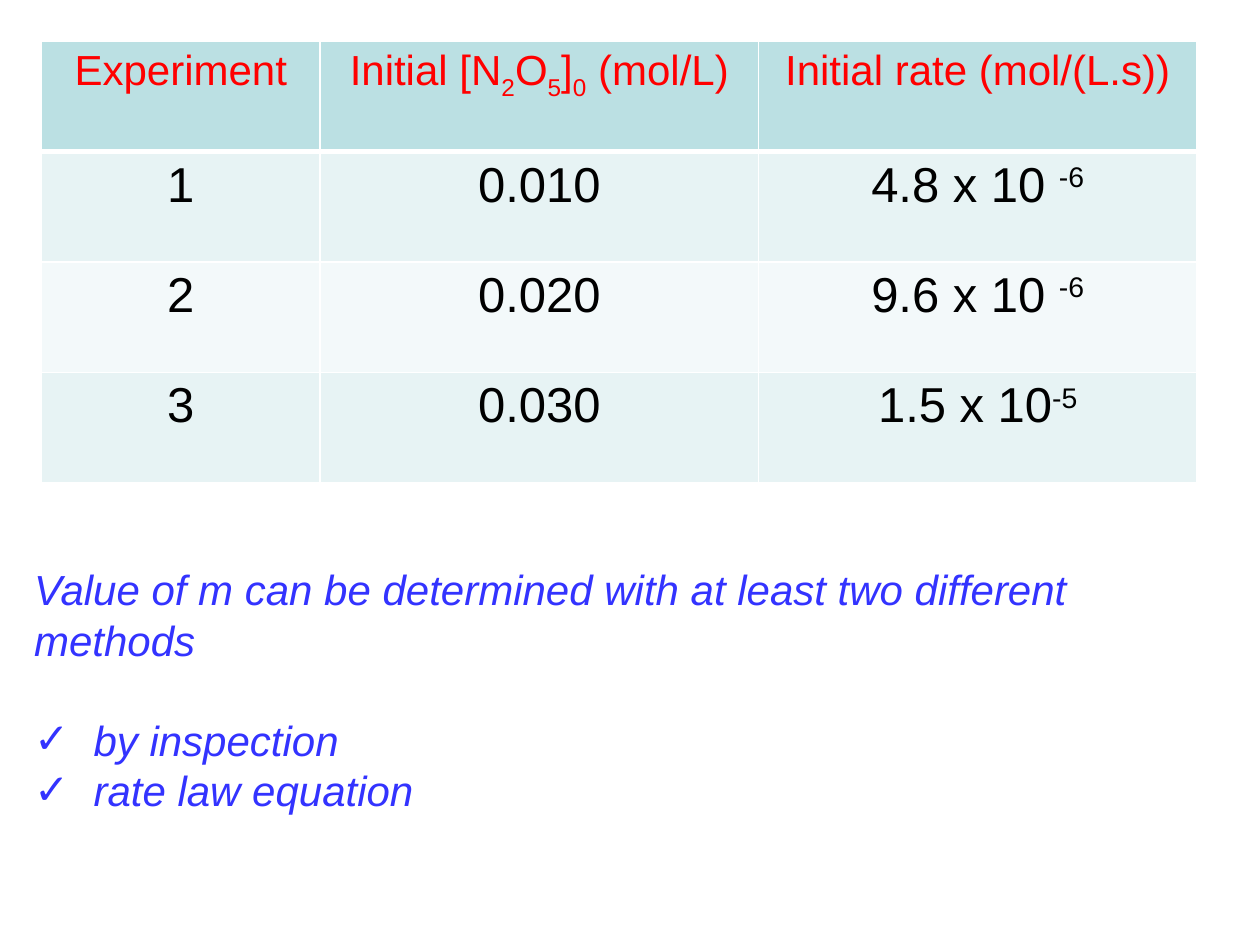
from dataclasses import dataclass

from lxml.etree import SubElement
from pptx import Presentation
from pptx.dml.color import RGBColor
from pptx.enum.text import MSO_ANCHOR, MSO_AUTO_SIZE, PP_ALIGN
from pptx.oxml.ns import qn
from pptx.util import Inches, Pt

RED = RGBColor(0xFF, 0x00, 0x00)
BLACK = RGBColor(0x00, 0x00, 0x00)
BLUE = RGBColor(0x33, 0x33, 0xFF)
WHITE = RGBColor(0xFF, 0xFF, 0xFF)
TEAL = RGBColor(0xBB, 0xE0, 0xE3)
MIST = RGBColor(0xE7, 0xF3, 0xF4)
FROST = RGBColor(0xF3, 0xF9, 0xFA)

FONT = "Arial"
SUB, SUPER = -25, 30
COLUMN_WIDTHS = (2.21, 3.48, 3.48)
ROW_HEIGHT = 0.875
METHOD_INDENT = Inches(0.38)


@dataclass(frozen=True)
class Piece:
    """A stretch of text and its baseline shift in percent."""
    text: str
    shift: int = 0


@dataclass(frozen=True)
class Row:
    """One table row with its look."""
    cells: tuple
    fill: RGBColor
    color: RGBColor = BLACK
    size: int = 28
    rule: int = 1


def measurement(number: str, concentration: str, rate: str, power: str, fill: RGBColor) -> Row:
    """Return the row of one experiment."""
    return Row(((Piece(number),), (Piece(concentration),),
                (Piece(rate), Piece(power, SUPER))), fill)


ROWS = (
    Row(((Piece("Experiment"),),
         (Piece("Initial [N"), Piece("2", SUB), Piece("O"), Piece("5", SUB),
          Piece("]"), Piece("0", SUB), Piece(" (mol/L)")),
         (Piece("Initial rate (mol/(L.s))"),)), TEAL, RED, 24, 3),
    measurement("1", "0.010", "4.8 x 10 ", "-6", MIST),
    measurement("2", "0.020", "9.6 x 10 ", "-6", FROST),
    measurement("3", "0.030", "1.5 x 10", "-5", MIST),
)
STATEMENT = "Value of m can be determined with at least two different methods"
METHODS = (" by inspection", " rate law equation")


def add_piece(paragraph, piece: Piece, size: int, color: RGBColor, italic: bool = False) -> None:
    """Append one formatted run to a paragraph."""
    run = paragraph.add_run()
    run.text = piece.text
    run.font.name = FONT
    run.font.size = Pt(size)
    run.font.bold = False
    run.font.italic = italic
    run.font.color.rgb = color
    if piece.shift:
        run.font._element.set("baseline", str(piece.shift * 1000))


def add_borders(cell, bottom: int) -> None:
    """Draw white borders around a cell."""
    properties = cell._tc.get_or_add_tcPr()
    for side, width in (("L", 1), ("R", 1), ("T", 1), ("B", bottom)):
        line = SubElement(properties, qn(f"a:ln{side}"), w=str(Pt(width)))
        fill = SubElement(line, qn("a:solidFill"))
        SubElement(fill, qn("a:srgbClr"), val=str(WHITE))


def add_experiments(slide) -> None:
    """Add the table of experiments."""
    table = slide.shapes.add_table(
        len(ROWS), len(COLUMN_WIDTHS), Inches(0.33), Inches(0.33),
        Inches(sum(COLUMN_WIDTHS)), Inches(ROW_HEIGHT * len(ROWS))).table
    table.first_row = table.horz_banding = False
    for column, width in zip(table.columns, COLUMN_WIDTHS):
        column.width = Inches(width)
    for experiment, line in zip(ROWS, table.rows):
        line.height = Inches(ROW_HEIGHT)
        for pieces, cell in zip(experiment.cells, line.cells):
            add_borders(cell, experiment.rule)
            cell.fill.solid()
            cell.fill.fore_color.rgb = experiment.fill
            paragraph = cell.text_frame.paragraphs[0]
            paragraph.alignment = PP_ALIGN.CENTER
            for piece in pieces:
                add_piece(paragraph, piece, experiment.size, experiment.color)


def write_line(paragraph, text: str, bullet: str = "", gap: int = 0) -> None:
    """Write one line of the methods text, with a bullet if given."""
    paragraph.line_spacing = Pt(29)
    paragraph.space_before = Pt(gap)
    properties = paragraph._p.get_or_add_pPr()
    indent = METHOD_INDENT if bullet else 0
    properties.set("marL", str(indent))
    properties.set("indent", str(-indent))
    if bullet:
        SubElement(properties, qn("a:buChar"), char=bullet)
    else:
        SubElement(properties, qn("a:buNone"))
    add_piece(paragraph, Piece(text), 24, BLUE, italic=True)


def add_methods(slide) -> None:
    """Fill the body placeholder with the statement and its methods."""
    body = slide.placeholders[1]
    body.left, body.top = Inches(0.17), Inches(4.42)
    body.width, body.height = Inches(9.75), Inches(2.12)
    frame = body.text_frame
    frame.word_wrap = True
    frame.auto_size = MSO_AUTO_SIZE.SHAPE_TO_FIT_TEXT
    frame.vertical_anchor = MSO_ANCHOR.TOP
    write_line(frame.paragraphs[0], STATEMENT)
    for index, method in enumerate(METHODS):
        write_line(frame.add_paragraph(), method, "✓", 0 if index else 28)


def main() -> None:
    """Build and save the slide."""
    deck = Presentation()
    deck.slide_width, deck.slide_height = Inches(10), Inches(7.5)
    slide = deck.slides.add_slide(deck.slide_layouts[1])
    title = slide.shapes.title.element
    title.getparent().remove(title)
    add_experiments(slide)
    add_methods(slide)
    deck.save("out.pptx")


if __name__ == "__main__":
    main()
